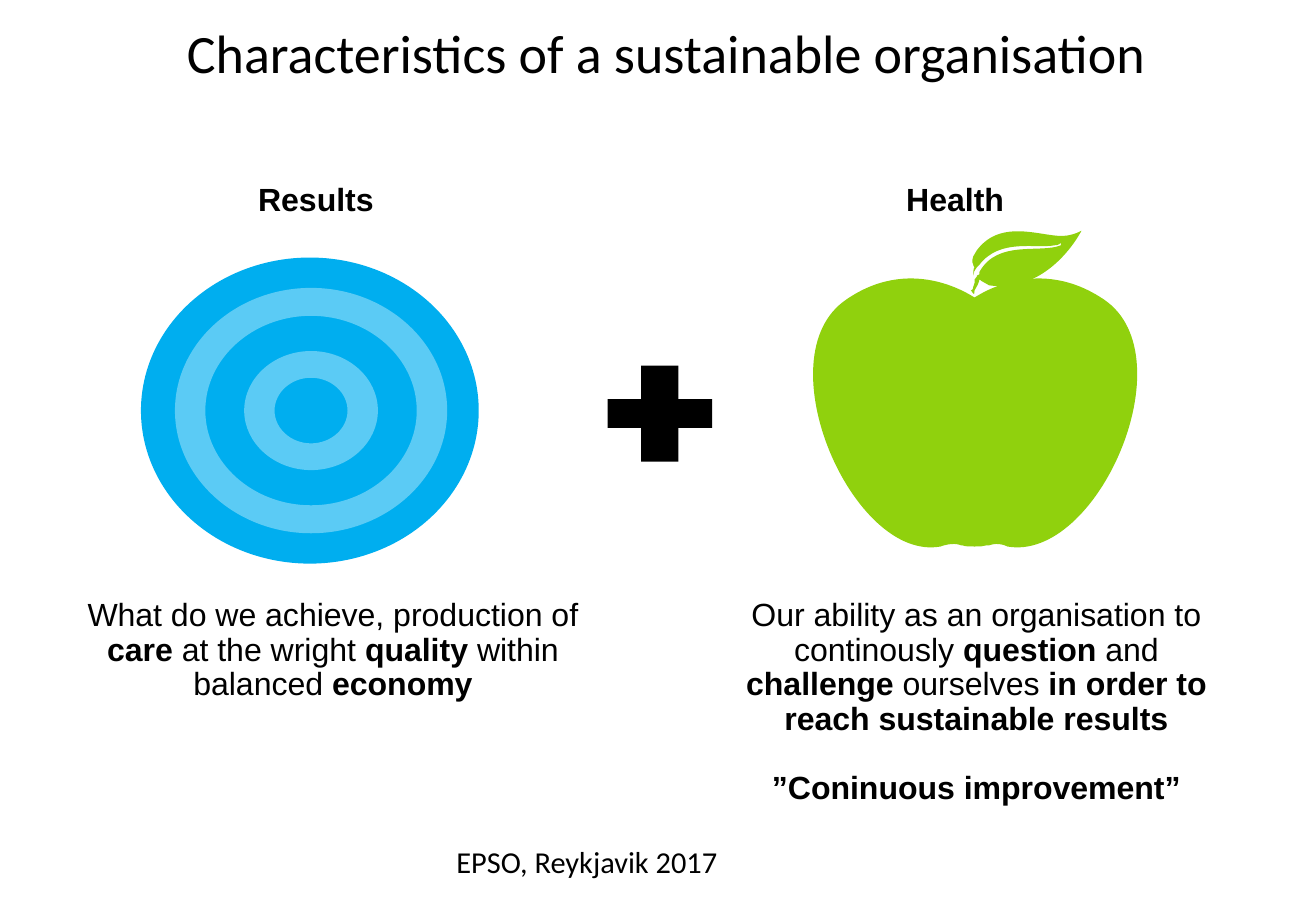
import lxml.etree
import pptx
import pptx.util
import pptx.dml.color
import pptx.enum.shapes
import pptx.enum.text
import pptx.oxml.ns

Inches = pptx.util.Inches
Pt = pptx.util.Pt
qn = pptx.oxml.ns.qn
Anchor = pptx.enum.text.MSO_ANCHOR
Shape = pptx.enum.shapes.MSO_SHAPE

BLACK, BLUE, LIGHT_BLUE, GREEN = "000000", "00AEEF", "5BCBF5", "90D10D"
TITLE = "Characteristics of a sustainable organisation"
FOOTER = "EPSO, Reykjavik 2017"
HEADINGS = [("Health", 7.45, 0.82), ("Results", 2.08, 1.04)]
RESULTS_TEXT = [
    [("What do we achieve, production of ", False), ("care", True),
     (" at the wright ", False), ("quality", True),
     (" within balanced ", False), ("economy", True)],
]
HEALTH_TEXT = [
    [("Our ability as an organisation to continously ", False),
     ("question", True), (" and ", False), ("challenge", True),
     (" ourselves ", False), ("in order to reach sustainable results", True)],
    [("”Coninuous improvement”", True)],
]

RING_CENTER = (2.56, 3.38)
RING_RADII = [(1.12, 1.01), (0.87, 0.78), (0.55, 0.49), (0.3, 0.27)]
ARC_RATIO = 0.55

APPLE = ((9.09, 2.47), [
    (8.55, 2.1, 8.07, 2.42, 8.02, 2.45), (7.97, 2.42, 7.49, 2.1, 6.96, 2.47),
    (6.28, 2.94, 7.02, 4.63, 7.74, 4.5), (7.74, 4.5, 7.84, 4.46, 7.91, 4.49),
    (7.91, 4.49, 7.92, 4.49, 7.92, 4.49), (7.94, 4.5, 7.98, 4.5, 8.02, 4.5),
    (8.06, 4.5, 8.09, 4.5, 8.12, 4.49), (8.12, 4.49, 8.13, 4.49, 8.14, 4.49),
    (8.22, 4.46, 8.29, 4.5, 8.29, 4.5), (9.03, 4.63, 9.77, 2.94, 9.09, 2.47),
])
LEAF = ((7.99, 2.39), [
    (7.99, 2.39, 8.01, 2.39, 8.01, 2.36), (8.01, 2.36, 8.02, 2.33, 8.02, 2.33),
    (8.02, 2.32, 8.02, 2.32, 8.02, 2.3), (8.04, 2.29, 8.04, 2.27, 8.04, 2.27),
    (8.06, 2.26, 8.06, 2.26, 8.06, 2.26), (8.06, 2.26, 8.06, 2.26, 8.06, 2.24),
    (8.21, 1.97, 8.56, 2.09, 8.73, 2.02), (8.73, 2.02, 8.73, 2.02, 8.73, 2),
    (8.71, 2.02, 8.69, 2.02, 8.68, 2.02), (8.52, 2.05, 8.23, 1.96, 8.06, 2.18),
    (8.06, 2.18, 8.04, 2.2, 8.04, 2.2), (8.02, 2.23, 8.01, 2.24, 8.01, 2.27),
    (8.01, 2.24, 8.01, 2.21, 8.02, 2.2), (8.01, 2.2, 8.01, 2.18, 8.01, 2.18),
    (8.01, 2.18, 8.01, 2.18, 8.01, 2.18), (7.99, 2.15, 8.01, 2.12, 8.01, 2.11),
    (8.02, 2.09, 8.02, 2.08, 8.04, 2.06), (8.04, 2.06, 8.04, 2.06, 8.04, 2.06),
    (8.25, 1.78, 8.61, 1.97, 8.78, 1.94), (8.85, 1.93, 8.9, 1.9, 8.9, 1.9),
    (8.9, 1.9, 8.64, 2.42, 8.14, 2.35), (8.11, 2.33, 8.08, 2.32, 8.06, 2.3),
    (8.06, 2.3, 8.06, 2.3, 8.06, 2.3), (8.06, 2.32, 8.04, 2.36, 8.02, 2.39),
    (8.02, 2.44, 8.01, 2.42, 7.99, 2.39),
])
UNITS = 1000


def color(code):
    return pptx.dml.color.RGBColor.from_string(code)


def paint(shape, code):
    shape.shadow.inherit = False
    shape.fill.solid()
    shape.fill.fore_color.rgb = color(code)
    shape.line.fill.background()


def add_preset(page, kind, at, code):
    shape = page.shapes.add_shape(kind, *map(Inches, at))
    paint(shape, code)
    return shape


def ring_contour(radius_x, radius_y, direction):
    x, y = RING_CENTER
    a, b = radius_x * direction, radius_y
    c, d = a * ARC_RATIO, b * ARC_RATIO
    return (x, y - b), [
        (x - c, y - b, x - a, y - d, x - a, y),
        (x - a, y + d, x - c, y + b, x, y + b),
        (x + c, y + b, x + a, y + d, x + a, y),
        (x + a, y - d, x + c, y - b, x, y - b),
    ]


def add_curved(page, contours, code):
    builder = page.shapes.build_freeform(
        *(value * UNITS for value in contours[0][0]), scale=Inches(1) / UNITS)
    for index, (start, curves) in enumerate(contours):
        if index:
            builder.move_to(*(value * UNITS for value in start))
        builder.add_line_segments(
            [(curve[i] * UNITS, curve[i + 1] * UNITS)
             for curve in curves for i in (0, 2, 4)], close=True)
    shape = builder.convert_to_shape()
    lines = list(shape.element.iter(qn("a:lnTo")))
    for first, second, third in zip(lines[::3], lines[1::3], lines[2::3]):
        bezier = lxml.etree.Element(qn("a:cubicBezTo"))
        first.addprevious(bezier)
        for line in (first, second, third):
            bezier.append(line[0])
            line.getparent().remove(line)
    paint(shape, code)


def add_text(page, paragraphs, at, font, size, anchor=Anchor.TOP,
             inset=0, spacing=1.0, gap=0, wrap=True):
    box = page.shapes.add_textbox(*map(Inches, at))
    frame = box.text_frame
    frame.word_wrap = wrap
    frame.vertical_anchor = anchor
    frame.margin_left = frame.margin_right = Inches(inset)
    frame.margin_top = frame.margin_bottom = Inches(inset / 2)
    for index, spans in enumerate(paragraphs):
        para = frame.add_paragraph() if index else frame.paragraphs[0]
        para.alignment = pptx.enum.text.PP_ALIGN.CENTER
        para.line_spacing = spacing
        if index:
            para.space_before = Pt(gap)
        for text, bold in spans:
            span = para.add_run()
            span.text = text
            span.font.name = font
            span.font.size = Pt(size)
            span.font.bold = bold
            span.font.color.rgb = color(BLACK)


def main():
    deck = pptx.Presentation()
    deck.slide_width, deck.slide_height = Inches(10.83), Inches(7.5)
    page = deck.slides.add_slide(deck.slide_layouts[6])

    add_text(page, [[(TITLE, False)]], (0.14, 0.26, 10.69, 0.33),
             "Calibri", 32, Anchor.MIDDLE, inset=0.1)
    add_preset(page, Shape.OVAL, (1.16, 2.12, 2.78, 2.52), BLUE)
    rings = [ring_contour(*radii, direction=(-1) ** index)
             for index, radii in enumerate(RING_RADII)]
    add_curved(page, rings, LIGHT_BLUE)
    for heading, left, width in HEADINGS:
        add_text(page, [[(heading, True)]], (left, 1.47, width, 0.32),
                 "Arial", 19, Anchor.BOTTOM, wrap=False)
    add_curved(page, [APPLE], GREEN)
    add_curved(page, [LEAF], GREEN)
    plus = add_preset(page, Shape.CROSS, (5, 3.01, 0.86, 0.79), BLACK)
    plus.adjustments[0] = 0.35

    for paragraphs, at in ((HEALTH_TEXT, (6.14, 4.93, 3.79, 1.73)),
                           (RESULTS_TEXT, (0.68, 4.93, 4.12, 0.86))):
        add_text(page, paragraphs, at, "Arial", 19, spacing=0.9, gap=20.5)
    add_text(page, [[(FOOTER, False)]], (0.23, 6.89, 9.2, 0.5),
             "Calibri", 18, inset=0.1)
    deck.save("out.pptx")


if __name__ == "__main__":
    main()
